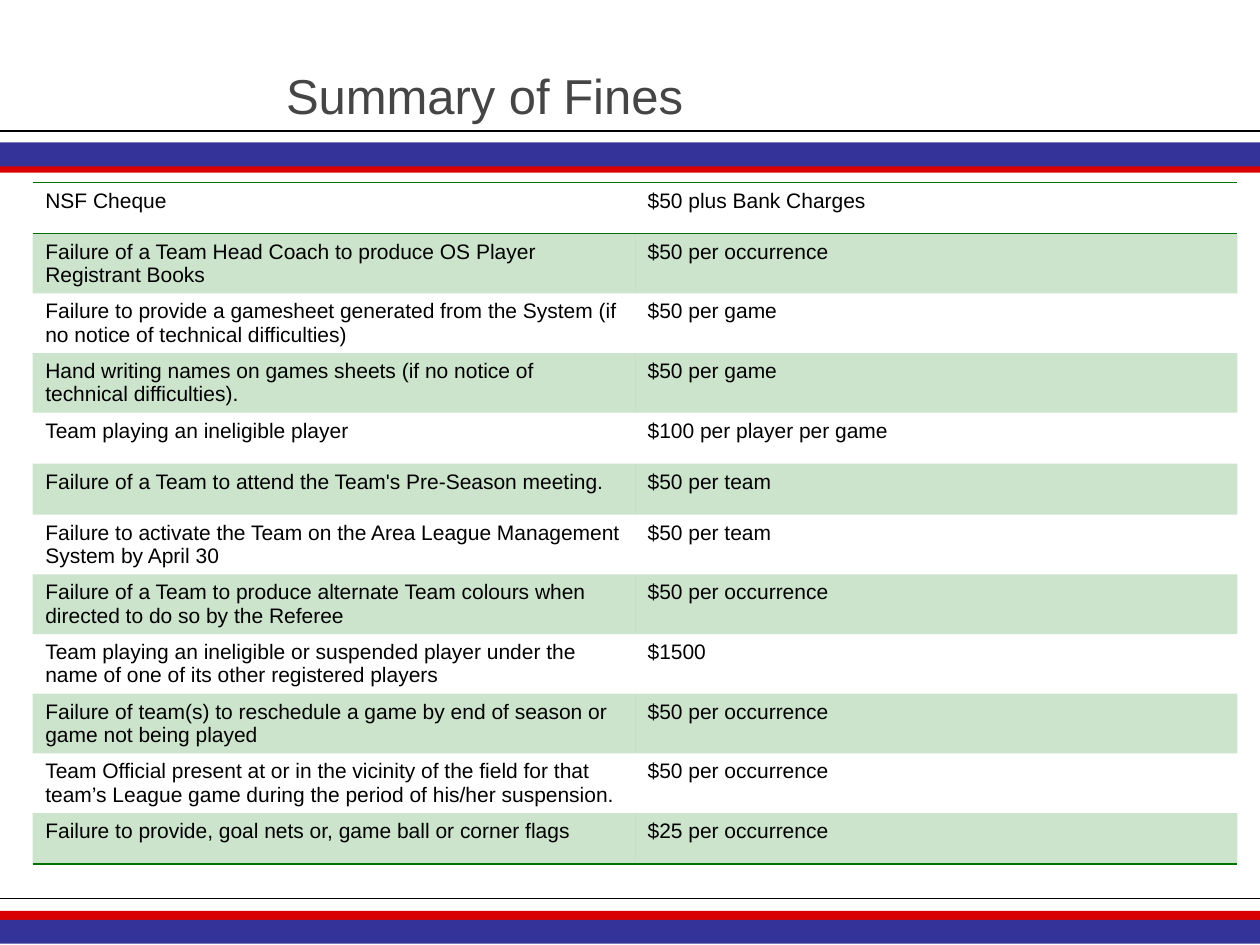
from lxml.etree import SubElement
from pptx import Presentation
from pptx.dml.color import RGBColor
from pptx.enum.shapes import MSO_CONNECTOR, MSO_SHAPE
from pptx.enum.text import MSO_ANCHOR, PP_ALIGN
from pptx.oxml.ns import qn
from pptx.util import Inches, Pt

RED = RGBColor(0xD8, 0x00, 0x00)
BLUE = RGBColor(0x33, 0x33, 0x99)
GREEN = RGBColor(0x00, 0x73, 0x00)
GREY = RGBColor(0x45, 0x45, 0x45)
BLACK = RGBColor(0x00, 0x00, 0x00)
PLAIN = "{2D5ABB26-0587-4C30-8999-92F81FD0307C}"

FINES = [
    ("NSF Cheque", "$50 plus Bank Charges"),
    ("Failure of a Team Head Coach to produce OS Player Registrant Books",
     "$50 per occurrence"),
    ("Failure to provide a gamesheet generated from the System "
     "(if no notice of technical difficulties)", "$50 per game"),
    ("Hand writing names on games sheets "
     "(if no notice of technical difficulties).", "$50 per game"),
    ("Team playing an ineligible player", "$100 per player per game"),
    ("Failure of a Team to attend the Team's Pre-Season meeting.",
     "$50 per team"),
    ("Failure to activate the Team on the Area League Management System "
     "by April 30", "$50 per team"),
    ("Failure of a Team to produce alternate Team colours when directed "
     "to do so by the Referee", "$50 per occurrence"),
    ("Team playing an ineligible or suspended player under the name of "
     "one of its other registered players", "$1500"),
    ("Failure of team(s) to reschedule a game by end of season or game "
     "not being played", "$50 per occurrence"),
    ("Team Official present at or in the vicinity of the field for that "
     "team’s League game during the period of his/her suspension.",
     "$50 per occurrence"),
    ("Failure to provide, goal nets or, game ball or corner flags",
     "$25 per occurrence"),
]


def write(frame, text, size=12, color=BLACK, space=1.0):
    para = frame.paragraphs[0]
    para.alignment = PP_ALIGN.LEFT
    para.line_spacing = space
    run = para.add_run()
    run.text = text
    run.font.name = "Arial"
    run.font.size = Pt(size)
    run.font.color.rgb = color


class Page:
    """Draws the styled elements of one slide."""

    def __init__(self, slide):
        self.slide = slide
        self.shapes = slide.shapes

    def band(self, top, height, color):
        bar = self.shapes.add_shape(MSO_SHAPE.RECTANGLE, 0, Inches(top),
                                    Inches(10), Inches(height))
        bar.shadow.inherit = False
        bar.fill.solid()
        bar.fill.fore_color.rgb = color
        bar.line.fill.background()

    def rule(self, top):
        line = self.shapes.add_connector(MSO_CONNECTOR.STRAIGHT, 0, Inches(top),
                                         Inches(10), Inches(top))
        line.line.color.rgb = BLACK
        line.line.width = Pt(0.75)
        SubElement(line._element.spPr, qn("a:effectLst"))

    def title(self, text):
        box = self.shapes.title
        box.left, box.top = Inches(2.17), Inches(0.24)
        box.width, box.height = Inches(6.41), Inches(0.79)
        box.text_frame.vertical_anchor = MSO_ANCHOR.BOTTOM
        write(box.text_frame, text, size=28, color=GREY, space=0.8)

    def edge(self, cell, side):
        line = SubElement(cell._tc.get_or_add_tcPr(), qn("a:" + side), w=str(Pt(1)))
        fill = SubElement(line, qn("a:solidFill"))
        SubElement(fill, qn("a:srgbClr"), val=str(GREEN))

    def tint(self, cell):
        cell.fill.solid()
        cell.fill.fore_color.rgb = GREEN
        color = cell._tc.tcPr.find(qn("a:solidFill"))[0]
        SubElement(color, qn("a:alpha"), val="20000")

    def table(self, rows):
        height = Inches(0.405)
        grid = self.shapes.add_table(len(rows), 2, Inches(0.26), Inches(1.45),
                                     Inches(9.56), height * len(rows)).table
        grid.first_row = grid.horz_banding = False
        grid._tbl.tblPr.find(qn("a:tableStyleId")).text = PLAIN
        for i, row in enumerate(rows):
            grid.rows[i].height = height
            for j, text in enumerate(row):
                cell = grid.cell(i, j)
                write(cell.text_frame, text)
                if i == 0:
                    self.edge(cell, "lnT")
                if i in (0, len(rows) - 1):
                    self.edge(cell, "lnB")
                if i % 2:
                    self.tint(cell)
                else:
                    cell.fill.background()


def main():
    deck = Presentation()
    deck.slide_width, deck.slide_height = Inches(10), Inches(7.5)
    page = Page(deck.slides.add_slide(deck.slide_layouts[5]))
    for top, red, blue in ((1.04, 1.28, 1.13), (7.13, 7.23, 7.3)):
        page.band(red, 0.09, RED)
        page.band(blue, 0.19, BLUE)
        page.rule(top)
    page.title("Summary of Fines")
    page.table(FINES)
    deck.save("out.pptx")


if __name__ == "__main__":
    main()
